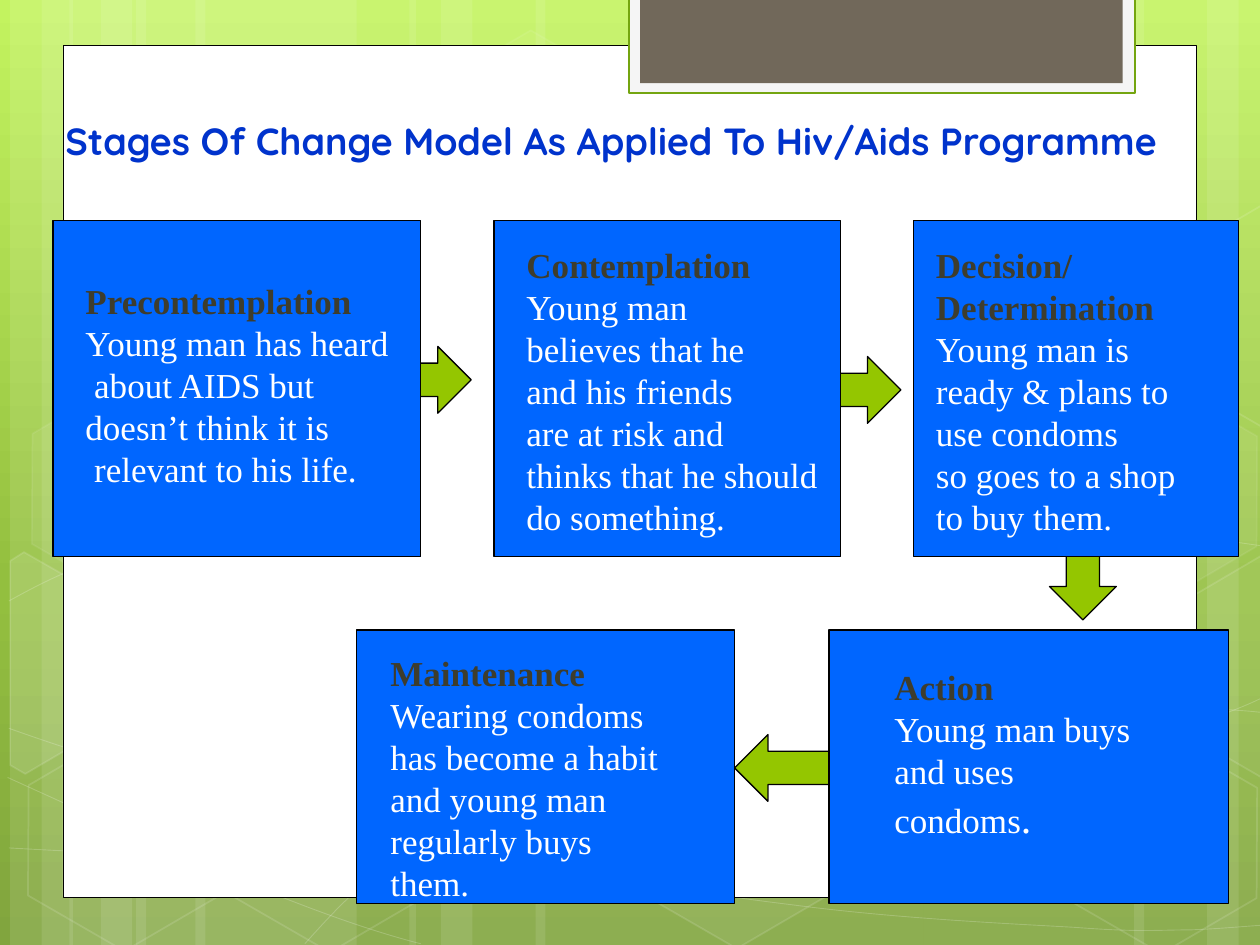
from copy import deepcopy
from math import cos, radians, sin
from typing import NamedTuple

from lxml import etree
from pptx import Presentation
from pptx.dml.color import RGBColor
from pptx.enum.shapes import MSO_SHAPE
from pptx.enum.text import MSO_ANCHOR, PP_ALIGN
from pptx.oxml.ns import qn
from pptx.util import Inches, Pt

RECT, HEXAGON = MSO_SHAPE.RECTANGLE, MSO_SHAPE.HEXAGON
LEFT_ARROW, RIGHT_ARROW, DOWN_ARROW = MSO_SHAPE.LEFT_ARROW, MSO_SHAPE.RIGHT_ARROW, MSO_SHAPE.DOWN_ARROW
TOP, BOTTOM, LEFT = MSO_ANCHOR.TOP, MSO_ANCHOR.BOTTOM, PP_ALIGN.LEFT

HEXAGON_TILT = 30
COLORS = {
    "white": "FFFFFF", "black": "000000", "blue": "0066FF", "green": "94C600",
    "title": "0033CC", "heading": "3E3D2D", "tab": "71685A",
    "tab_frame": "F5F5F5", "tab_line": "74A510",
    "sky": "C3F35F", "leaf": "93BF3F", "moss": "81A53E",
}
BACKGROUND = [(0, "sky"), (0.62, "leaf"), (1, "moss")]
STRIPES = [(1.08, 1.75, 0), (0.08, 0.5, 0), (0.33, 0.83, 0), (1.55, 1.75, 0), (0.55, 0.5, 0),
           (0.8, 0.83, 0), (7.33, 1.75, 180), (9.58, 0.5, 180), (9, 0.83, 180),
           (4.25, 3.08, 0), (3.25, 0.5, 0), (3.5, 0.83, 0)]
CURVES = [
    [(0.07, 6.73), (0.61, 6.76), (1.15, 6.79), (1.9, 6.78), (2.65, 6.77), (3.58, 6.75), (4.58, 6.65),
     (5.58, 6.55), (7, 6.36), (7.92, 6.17), (8.83, 5.98), (9.77, 5.68), (10.07, 5.51)],
    [(0.07, 4.77), (0.36, 4.61), (0.65, 4.46), (1.21, 4.31), (1.78, 4.16), (2.59, 3.94), (3.47, 3.87),
     (4.36, 3.8), (5.44, 3.79), (6.54, 3.87), (7.64, 3.95), (9.47, 4.26), (10.07, 4.34)],
    [(0.06, 6.17), (1.27, 6.72), (2.47, 7.27), (3.34, 7.49)],
    [(0.07, 5.78), (0.38, 5.89), (0.7, 6), (1.28, 6.16), (1.86, 6.31), (2.73, 6.56), (3.57, 6.73),
     (4.4, 6.9), (5.45, 7.08), (6.28, 7.18), (7.11, 7.29), (8, 7.33), (8.53, 7.36),
     (9.05, 7.4), (9.19, 7.38), (9.45, 7.38), (9.71, 7.37), (9.89, 7.35), (10.07, 7.34)],
    [(2.42, 7.49), (2.6, 7.29), (2.78, 7.09), (3.02, 6.91), (3.26, 6.73), (3.6, 6.53), (3.88, 6.39),
     (4.16, 6.25), (4.33, 6.19), (4.7, 6.09), (5.06, 5.99), (5.73, 5.85), (6.08, 5.78),
     (6.44, 5.71), (6.49, 5.71), (6.8, 5.69), (7.11, 5.66), (7.6, 5.63), (7.94, 5.62),
     (8.29, 5.61), (8.86, 5.62), (8.86, 5.62), (9.08, 5.62), (9.31, 5.62), (9.53, 5.62),
     (9.71, 5.63), (9.88, 5.64), (9.97, 5.65), (10.06, 5.66), (10.03, 5.65), (10.06, 5.66)],
]


class Hexagon(NamedTuple):
    left: float
    top: float
    fill_alpha: int
    line_alpha: int


class CutHexagon(NamedTuple):
    center: tuple
    points: list
    fill_alpha: int


class Arrow(NamedTuple):
    kind: int
    box: tuple


class Stage(NamedTuple):
    box: tuple
    text_box: tuple
    heading: list
    lines: list


HEXAGONS = [
    Hexagon(3.34, 0.36, 4, 8), Hexagon(4.97, 5.89, 6, 12), Hexagon(0.11, 5.91, 0, 12),
    Hexagon(0.14, 3.12, 7, 8), Hexagon(1.74, 5.92, 0, 12), Hexagon(7.53, 4.53, 10, 12),
    Hexagon(8.34, 5.93, 0, 12), Hexagon(8.34, 3.14, 7, 8),
]
CUT_HEXAGONS = [
    CutHexagon((0.36, 5.35), [(0.08, 4.45), (0.19, 4.38), (0.96, 4.82), (0.95, 5.7),
                              (0.2, 6.14), (0.08, 6.07)], 10),
    CutHexagon((9.85, 5.2), [(9.26, 4.85), (10.01, 4.41), (10.09, 4.46), (10.09, 6.13),
                             (10.02, 6.17), (9.26, 5.73)], 4),
    CutHexagon((9.85, 2.41), [(9.26, 2.07), (10.01, 1.63), (10.1, 1.68), (10.09, 3.35),
                              (10.02, 3.39), (9.26, 2.95)], 0),
]
ARROWS = [
    Arrow(LEFT_ARROW, (5.83, 5.83, 1.07, 0.53)),
    Arrow(DOWN_ARROW, (8.33, 3.85, 0.53, 1.07)),
    Arrow(RIGHT_ARROW, (6.08, 2.83, 1.07, 0.53)),
    Arrow(RIGHT_ARROW, (2.67, 2.75, 1.07, 0.53)),
]
STAGES = [
    Stage((6.58, 5, 3.17, 2.17), (7, 5.23, 2.2, 1.17), ["Action"],
          ["Young man buys", "and uses condoms"]),
    Stage((2.83, 5, 3, 2.17), (3, 5.12, 2.4, 1.77), ["Maintenance"],
          ["Wearing condoms", "has become a habit", "and young man", "regularly buys them."]),
    Stage((7.25, 1.75, 2.58, 2.67), (7.33, 1.88, 2.17, 2.43), ["Decision/", "Determination"],
          ["Young man is", "ready & plans to", "use condoms", "so goes to a shop", "to buy them."]),
    Stage((3.92, 1.75, 2.75, 2.67), (4.08, 1.88, 2.57, 2.43), ["Contemplation"],
          ["Young man", "believes that he", "and his friends", "are at risk and",
           "thinks that he should", "do something."]),
    Stage((0.42, 1.75, 2.92, 2.67), (0.58, 2.17, 2.65, 1.77), ["Precontemplation"],
          ["Young man has heard", " about AIDS but", "doesn’t think it is", " relevant to his life."]),
]


def rgb(name: str) -> RGBColor:
    return RGBColor.from_string(COLORS[name])


def set_alpha(fill_element, percent: int) -> None:
    if percent < 100:
        etree.SubElement(fill_element[0], qn("a:alpha"), val=str(percent * 1000))


def style(sp, fill=None, line=None, width=0.75, fill_alpha=100, line_alpha=100) -> None:
    sp.shadow.inherit = False
    spPr = sp.element.spPr
    if fill and fill_alpha:
        sp.fill.solid()
        sp.fill.fore_color.rgb = rgb(fill)
        set_alpha(spPr.find(qn("a:solidFill")), fill_alpha)
    else:
        sp.fill.background()
    if line:
        sp.line.color.rgb = rgb(line)
        sp.line.width = Pt(width)
        set_alpha(spPr.find(qn("a:ln")).find(qn("a:solidFill")), line_alpha)
    else:
        sp.line.fill.background()


def add_shape(s, kind: int, box: tuple, **look):
    sp = s.shapes.add_shape(kind, *map(Inches, box))
    style(sp, **look)
    return sp


def add_outline(s, points: list, close: bool, **look):
    start, *rest = [(Inches(x), Inches(y)) for x, y in points]
    builder = s.shapes.build_freeform(*start)
    builder.add_line_segments(rest, close=close)
    sp = builder.convert_to_shape()
    style(sp, **look)
    return sp


def add_curve(s, knots: list) -> None:
    sp = add_outline(s, knots, False, line="white", width=0.5, line_alpha=20)
    outline = sp.element.find(".//" + qn("a:path"))
    segments = outline.findall(qn("a:lnTo"))
    for i in range(0, len(segments), 3):
        bezier = etree.SubElement(outline, qn("a:cubicBezTo"))
        for segment in segments[i:i + 3]:
            bezier.append(segment[0])
            outline.remove(segment)


def add_cut_hexagon(s, cut: CutHexagon) -> None:
    cx, cy = cut.center
    c, d = cos(radians(HEXAGON_TILT)), sin(radians(HEXAGON_TILT))
    upright = [(cx + (x - cx) * c + (y - cy) * d, cy - (x - cx) * d + (y - cy) * c)
               for x, y in cut.points]
    sp = add_outline(s, upright, True, fill="white", line="white", width=1,
                     fill_alpha=cut.fill_alpha, line_alpha=12)
    sp.rotation = HEXAGON_TILT


def add_run(p, text: str, *, size: float, color: str, font="Times New Roman", bold=False) -> None:
    r = p.add_run()
    r.text = text
    r.font.size, r.font.name, r.font.bold = Pt(size), font, bold
    r.font.color.rgb = rgb(color)


def add_text_frame(s, box: tuple, anchor=TOP):
    tf = s.shapes.add_textbox(*map(Inches, box)).text_frame
    tf.word_wrap = True
    tf.vertical_anchor = anchor
    return tf


def add_stage_text(s, stage: Stage) -> None:
    tf = add_text_frame(s, stage.text_box)
    for i, text in enumerate(stage.heading + stage.lines):
        p = tf.paragraphs[0] if i == 0 else tf.add_paragraph()
        p.alignment = LEFT
        is_heading = i < len(stage.heading)
        add_run(p, text, size=20, color="heading" if is_heading else "white", bold=is_heading)
    if stage.heading == ["Action"]:
        add_run(p, ".", size=24, color="white")


def paint_background(s) -> None:
    fill = s.background.fill
    fill.gradient()
    fill.gradient_angle = 270
    stops = s.element.find(".//" + qn("a:gsLst"))
    stops.insert(1, deepcopy(stops[0]))
    for stop, (position, color) in zip(fill.gradient_stops, BACKGROUND):
        stop.position = position
        stop.color.rgb = rgb(color)


def main() -> None:
    prs = Presentation()
    prs.slide_width, prs.slide_height = Inches(10), Inches(7.5)
    s = prs.slides.add_slide(prs.slide_layouts[6])
    paint_background(s)
    for left, width, rotation in STRIPES:
        sp = add_shape(s, RECT, (left, 0, width, 7.5), fill="white", fill_alpha=10)
        sp.rotation = rotation
    for knots in CURVES:
        add_curve(s, knots)
    for h in HEXAGONS:
        sp = add_shape(s, HEXAGON, (h.left, h.top, 1.75, 1.52), fill="white", line="white", width=1,
                       fill_alpha=h.fill_alpha, line_alpha=h.line_alpha)
        sp.adjustments[0] = 0.285
        sp.rotation = HEXAGON_TILT
    for cut in CUT_HEXAGONS:
        add_cut_hexagon(s, cut)
    add_shape(s, RECT, (0.5, 0.36, 9, 6.76), fill="white", line="black", width=0.5)
    add_shape(s, RECT, (4.99, -0.02, 4.02, 0.76), fill="tab_frame", line="tab_line", width=1.25)
    add_shape(s, RECT, (5.08, -0.02, 3.83, 0.68), fill="tab")
    for arrow in ARROWS:
        add_shape(s, arrow.kind, arrow.box, fill="green", line="black")
    for stage in STAGES:
        add_shape(s, RECT, stage.box, fill="blue", line="black")
    title = add_text_frame(s, (0.42, 0.76, 9, 0.58), BOTTOM)
    add_run(title.paragraphs[0], "Stages Of Change Model As Applied To Hiv/Aids Programme",
            size=21.6, color="title", font="Quicksand", bold=True)
    for stage in reversed(STAGES):
        add_stage_text(s, stage)
    prs.save("out.pptx")


if __name__ == "__main__":
    main()
